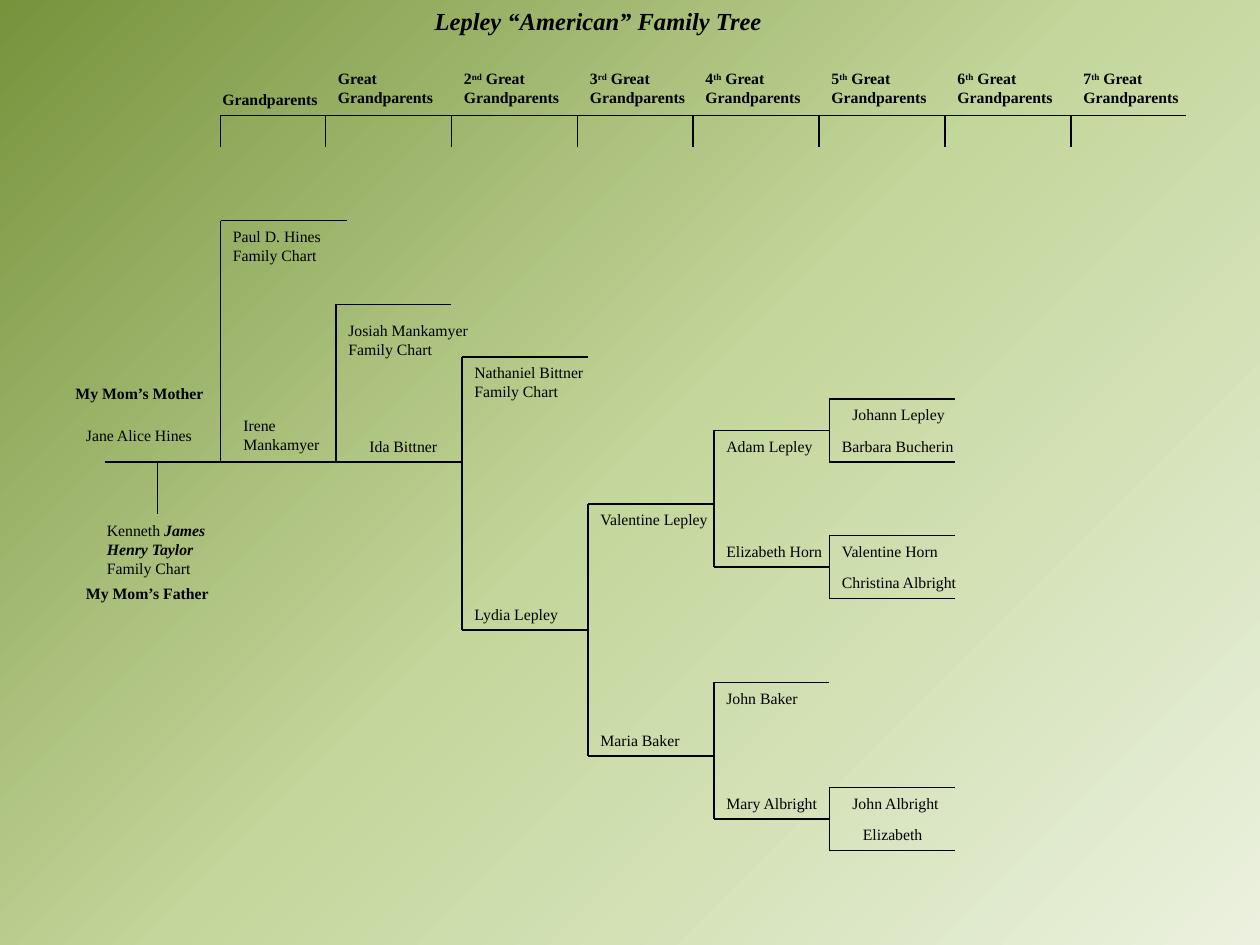
import dataclasses
import itertools
import typing

import lxml.etree
import pptx
import pptx.dml.color
import pptx.enum.shapes
import pptx.enum.text
import pptx.oxml.ns
import pptx.util

SCALE = 7620  # EMU in one px, 120 px to the inch
FONT = "Times New Roman"
HEX = {"ink": "000000", "pale": "EBF1DE", "mid": "C3D69B", "leaf": "77933C", "dark": "4F6228"}
STOPS = ((0, "pale"), (50, "mid"), (100, "leaf"), (100, "dark"))
HEIGHT = {1: 30, 2: 48, 3: 84}  # box height by number of lines
BOLD = {"bold": True}
SLANT = {"bold": True, "italic": True}


class Run(typing.NamedTuple):
    text: str
    style: dict = {}
    raised: bool = False


@dataclasses.dataclass
class Label:
    x: int
    y: int
    width: int
    lines: list[list[Run]]


@dataclasses.dataclass
class Fork:
    """Two parents: an upright with a top arm and a base arm."""
    x: int
    top: int
    base: int
    end: int
    foot: int = 0


def px(n: int) -> int:
    return pptx.util.Emu(n * SCALE)


def tint(name: str) -> pptx.dml.color.RGBColor:
    return pptx.dml.color.RGBColor.from_string(HEX[name])


def plain(x: int, y: int, width: int, text: str, style: dict = {}) -> Label:
    return Label(x, y, width, [[Run(line, style)] for line in text.split("\n")])


def fill(frame, lines: list[list[Run]], size: int) -> None:
    """Write the lines into a text frame."""
    form = {"word_wrap": True, "vertical_anchor": pptx.enum.text.MSO_ANCHOR.TOP,
            "auto_size": pptx.enum.text.MSO_AUTO_SIZE.NONE,
            "margin_left": px(12), "margin_right": px(12),
            "margin_top": px(6), "margin_bottom": px(6)}
    for key, value in form.items():
        setattr(frame, key, value)
    for i, line in enumerate(lines):
        para = frame.paragraphs[0] if i == 0 else frame.add_paragraph()
        para.alignment = pptx.enum.text.PP_ALIGN.LEFT
        for part in line:
            run = para.add_run()
            run.text = part.text
            base = {"name": FONT, "size": pptx.util.Pt(size), "bold": False, "italic": False}
            for key, value in (base | part.style).items():
                setattr(run.font, key, value)
            run.font.color.rgb = tint("ink")
            if part.raised:
                run._r.get_or_add_rPr().set("baseline", "30000")


def write(slide, label: Label) -> None:
    box = slide.shapes.add_textbox(px(label.x), px(label.y), px(label.width),
                                   px(HEIGHT[len(label.lines)]))
    fill(box.text_frame, label.lines, 9)


def rule(slide, x: int, y: int, to_x: int, to_y: int) -> None:
    line = slide.shapes.add_connector(pptx.enum.shapes.MSO_CONNECTOR.STRAIGHT,
                                      px(x), px(y), px(to_x), px(to_y))
    line.line.color.rgb = tint("ink")
    line.line.width = pptx.util.Pt(0.75)
    lxml.etree.SubElement(line._element.spPr, pptx.oxml.ns.qn("a:effectLst"))


def branch(slide, fork: Fork) -> None:
    rule(slide, fork.x, fork.top, fork.x, fork.base)
    rule(slide, fork.x, fork.top, fork.end, fork.top)
    rule(slide, fork.x, fork.base, fork.foot or fork.end, fork.base)


def shade(slide) -> None:
    """Give the background a gradient that spreads from the bottom right."""
    paint = slide.background.fill
    paint.gradient()
    grad = slide.background._cSld.find(".//" + pptx.oxml.ns.qn("a:gradFill"))
    for child in list(grad):
        grad.remove(child)

    def add(root, tag: str, **attrs: str):
        return lxml.etree.SubElement(root, pptx.oxml.ns.qn(tag), attrs)

    stops = add(grad, "a:gsLst")
    for place, name in STOPS:
        add(add(stops, "a:gs", pos=str(place * 1000)), "a:srgbClr", val=HEX[name])
    add(add(grad, "a:path", path="circle"), "a:fillToRect", l="100000", t="100000")


TICKS = [210, 310, 430, 550, 660, 780, 900, 1020]
ORDER = ["2nd", "3rd", "4th", "5th", "6th", "7th"]
HEADS = [plain(200, 80, 116, "Grandparents", BOLD),
         plain(310, 60, 116, "Great\nGrandparents", BOLD)]
HEADS += [Label(x, 60, 116, [[Run(rank[0], BOLD), Run(rank[1:], BOLD, True), Run(" Great", BOLD)],
                             [Run("Grandparents", BOLD)]])
          for x, rank in zip(TICKS[2:], ORDER)]

FORKS = [
    Fork(210, 210, 440, 330),
    Fork(320, 290, 440, 430, 440),
    Fork(440, 340, 600, 560),
    Fork(560, 480, 720, 680),
    Fork(680, 410, 540, 790),
    Fork(680, 650, 780, 790),
    Fork(790, 380, 440, 910),
    Fork(790, 510, 570, 910),
    Fork(790, 750, 810, 910),
]

KIN = [
    plain(60, 360, 148, "My Mom’s Mother", BOLD),
    plain(70, 400, 160, "Jane Alice Hines"),
    Label(90, 490, 118, [[Run("Kenneth"), Run(" James", SLANT)],
                         [Run("Henry Taylor", SLANT)], [Run("Family Chart")]]),
    plain(70, 550, 143, "My Mom’s Father", BOLD),
    plain(210, 210, 110, "Paul D. Hines\nFamily Chart"),
    plain(220, 390, 110, "Irene\nMankamyer"),
    plain(320, 300, 140, "Josiah Mankamyer\nFamily Chart"),
    plain(340, 410, 90, "Ida Bittner"),
    plain(440, 340, 130, "Nathaniel Bittner\nFamily Chart"),
    plain(440, 570, 140, "Lydia Lepley"),
    plain(560, 480, 140, "Valentine Lepley"),
    plain(560, 690, 100, "Maria Baker"),
    plain(680, 410, 110, "Adam Lepley"),
    plain(680, 510, 130, "Elizabeth Horn"),
    plain(680, 650, 110, "John Baker"),
    plain(680, 750, 150, "Mary Albright"),
    plain(800, 380, 140, "Johann Lepley"),
    plain(790, 410, 150, "Barbara Bucherin"),
    plain(790, 510, 120, "Valentine Horn"),
    plain(790, 540, 150, "Christina Albright"),
    plain(800, 750, 140, "John Albright"),
    plain(810, 780, 90, "Elizabeth"),
]


def main() -> None:
    deck = pptx.Presentation()
    deck.slide_width, deck.slide_height = px(1200), px(900)
    slide = deck.slides.add_slide(deck.slide_layouts[5])
    shade(slide)

    title = slide.shapes.title
    for key, value in {"left": 402, "top": 0, "width": 344, "height": 41}.items():
        setattr(title, key, px(value))
    fill(title.text_frame, [[Run("Lepley “American” Family Tree", SLANT)]], 14)

    for x, end in itertools.pairwise(TICKS + [1130]):
        rule(slide, x, 110, end, 110)
        rule(slide, x, 110, x, 140)
    rule(slide, 100, 440, 210, 440)
    rule(slide, 150, 440, 150, 490)
    for fork in FORKS:
        branch(slide, fork)
    for label in HEADS + KIN:
        write(slide, label)
    deck.save("out.pptx")


if __name__ == "__main__":
    main()
